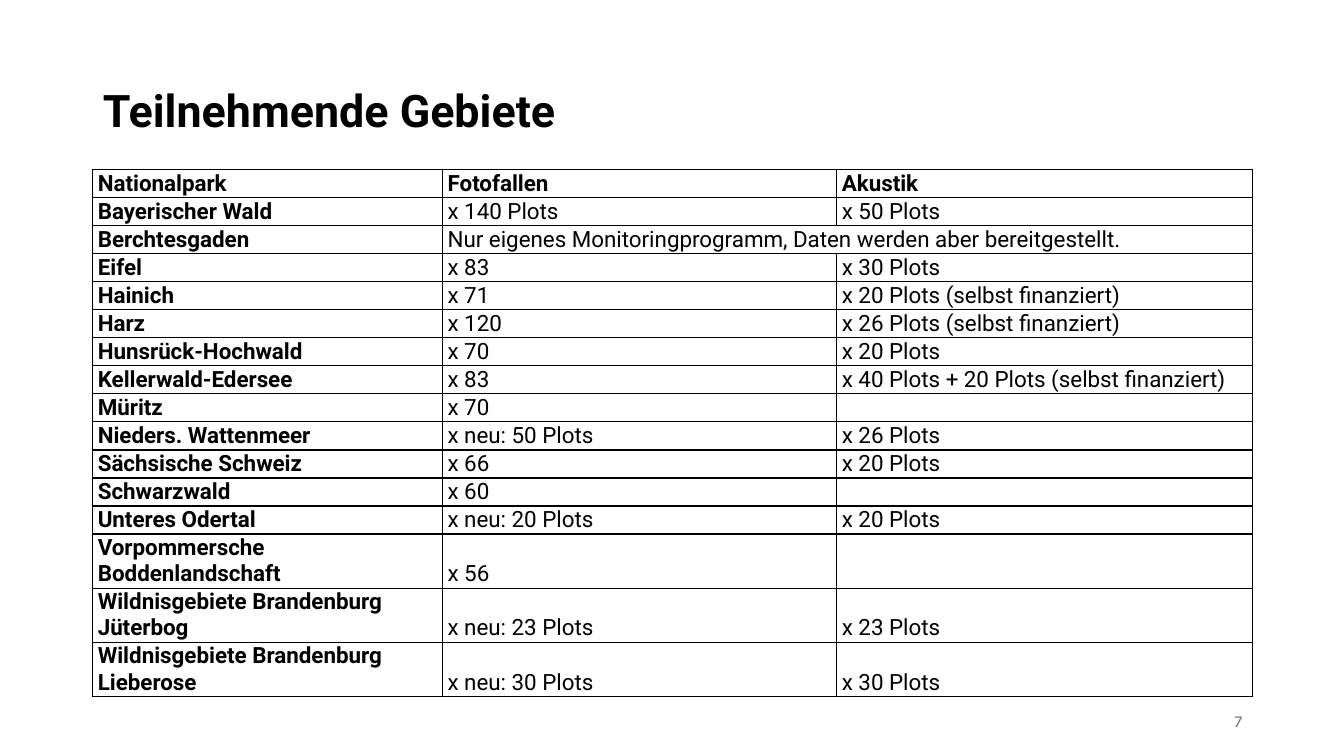
from lxml import etree
from pptx import Presentation
from pptx.dml.color import RGBColor
from pptx.enum import text
from pptx.oxml.ns import qn
from pptx.util import Inches, Pt

BLACK = RGBColor(0x00, 0x00, 0x00)
GREY = RGBColor(0x79, 0x79, 0x79)
TITLE_FONT = {"name": "Roboto", "size": Pt(32), "bold": True}
HEAD_FONT = {"name": "Roboto", "size": Pt(16), "bold": True}
BODY_FONT = {**HEAD_FONT, "bold": False}
NUMBER_FONT = {"name": "Karla", "size": Pt(12), "bold": False}

COLUMN_WIDTHS = [3.47, 3.91, 4.12]
LINE_HEIGHT, DOUBLE_HEIGHT, DOUBLE_ROWS = 0.27, 0.52, 3
SHARED_NOTE = "Nur eigenes Monitoringprogramm, Daten werden aber bereitgestellt."
AREAS = [
    ("Nationalpark", "Fotofallen", "Akustik"),
    ("Bayerischer Wald", "x 140 Plots", "x 50 Plots"),
    ("Berchtesgaden", SHARED_NOTE, None),
    ("Eifel", "x 83", "x 30 Plots"),
    ("Hainich", "x 71", "x 20 Plots (selbst finanziert)"),
    ("Harz", "x 120", "x 26 Plots (selbst finanziert)"),
    ("Hunsrück-Hochwald", "x 70", "x 20 Plots"),
    ("Kellerwald-Edersee", "x 83", "x 40 Plots + 20 Plots (selbst finanziert)"),
    ("Müritz", "x 70", ""),
    ("Nieders. Wattenmeer", "x neu: 50 Plots", "x 26 Plots"),
    ("Sächsische Schweiz", "x 66", "x 20 Plots"),
    ("Schwarzwald", "x 60", ""),
    ("Unteres Odertal", "x neu: 20 Plots", "x 20 Plots"),
    ("Vorpommersche Boddenlandschaft", "x 56", ""),
    ("Wildnisgebiete Brandenburg Jüterbog", "x neu: 23 Plots", "x 23 Plots"),
    ("Wildnisgebiete Brandenburg Lieberose", "x neu: 30 Plots", "x 30 Plots"),
]


def set_attributes(target, values):
    """Set every attribute named in a dict of format values."""
    for name, value in values.items():
        setattr(target, name, value)


def write(paragraph, words, font, color):
    """Put one formatted run into a paragraph."""
    span = paragraph.add_run()
    span.text = words
    set_attributes(span.font, font)
    span.font.color.rgb = color


def add_title(page, box, words):
    """Move the title placeholder into the box and fill it."""
    title = page.shapes.title
    set_attributes(title, dict(zip(("left", "top", "width", "height"), map(Inches, box))))
    set_attributes(title.text_frame, {"word_wrap": True, "auto_size": text.MSO_AUTO_SIZE.NONE,
                                      "vertical_anchor": text.MSO_ANCHOR.MIDDLE})
    para = title.text_frame.paragraphs[0]
    set_attributes(para, {"alignment": text.PP_ALIGN.LEFT, "line_spacing": 0.9})
    write(para, words, TITLE_FONT, BLACK)


def add_borders(cell):
    """Draw a thin black line on each side of a cell."""
    properties = cell._tc.get_or_add_tcPr()
    for side in ("lnL", "lnR", "lnT", "lnB"):
        line = etree.SubElement(properties, qn(f"a:{side}"), w=str(Pt(1)))
        fill = etree.SubElement(line, qn("a:solidFill"))
        etree.SubElement(fill, qn("a:srgbClr"), val=str(BLACK))


def fill_cell(cell, words, font):
    """Format one cell and write its words, if any."""
    add_borders(cell)
    cell.fill.background()
    set_attributes(cell, {"margin_left": Inches(0.05), "margin_right": Inches(0.05),
                          "margin_top": Inches(0.01), "margin_bottom": Inches(0.01),
                          "vertical_anchor": text.MSO_ANCHOR.BOTTOM})
    para = cell.text_frame.paragraphs[0]
    if words:
        write(para, words, font, BLACK)
    else:
        end = etree.SubElement(para._p, qn("a:endParaRPr"), sz=str(int(font["size"].pt * 100)))
        etree.SubElement(end, qn("a:latin"), typeface=font["name"])


def add_area_table(page, box, areas):
    """Build the table of areas inside the box."""
    frame = page.shapes.add_table(len(areas), len(COLUMN_WIDTHS), *map(Inches, box))
    table = frame.table
    set_attributes(table, {"first_row": False, "horz_banding": False})
    for column, width in zip(table.columns, COLUMN_WIDTHS):
        column.width = Inches(width)
    for index, area in enumerate(areas):
        is_double = index >= len(areas) - DOUBLE_ROWS
        table.rows[index].height = Inches(DOUBLE_HEIGHT if is_double else LINE_HEIGHT)
        for place, words in enumerate(area):
            font = HEAD_FONT if index == 0 or place == 0 else BODY_FONT
            fill_cell(table.cell(index, place), words, font)
        if area[2] is None:
            note = table.cell(index, 1)
            note.merge(table.cell(index, 2))
            note.vertical_anchor = text.MSO_ANCHOR.MIDDLE


def add_page_number(page, box, number):
    """Write the page number at the right of the box."""
    frame = page.shapes.add_textbox(*map(Inches, box)).text_frame
    set_attributes(frame, {"word_wrap": True, "vertical_anchor": text.MSO_ANCHOR.MIDDLE})
    para = frame.paragraphs[0]
    para.alignment = text.PP_ALIGN.RIGHT
    write(para, number, NUMBER_FONT, GREY)


def main():
    """Build the slide and save the deck."""
    deck = Presentation()
    set_attributes(deck, {"slide_width": Inches(13.33), "slide_height": Inches(7.5)})
    page = deck.slides.add_slide(deck.slide_layouts[5])
    add_title(page, (0.92, 0.4, 11.5, 1.45), "Teilnehmende Gebiete")
    add_area_table(page, (0.92, 1.68, 11.5, 5.07), AREAS)
    add_page_number(page, (9.42, 6.95, 3, 0.4), "7")
    deck.save("out.pptx")


if __name__ == "__main__":
    main()
